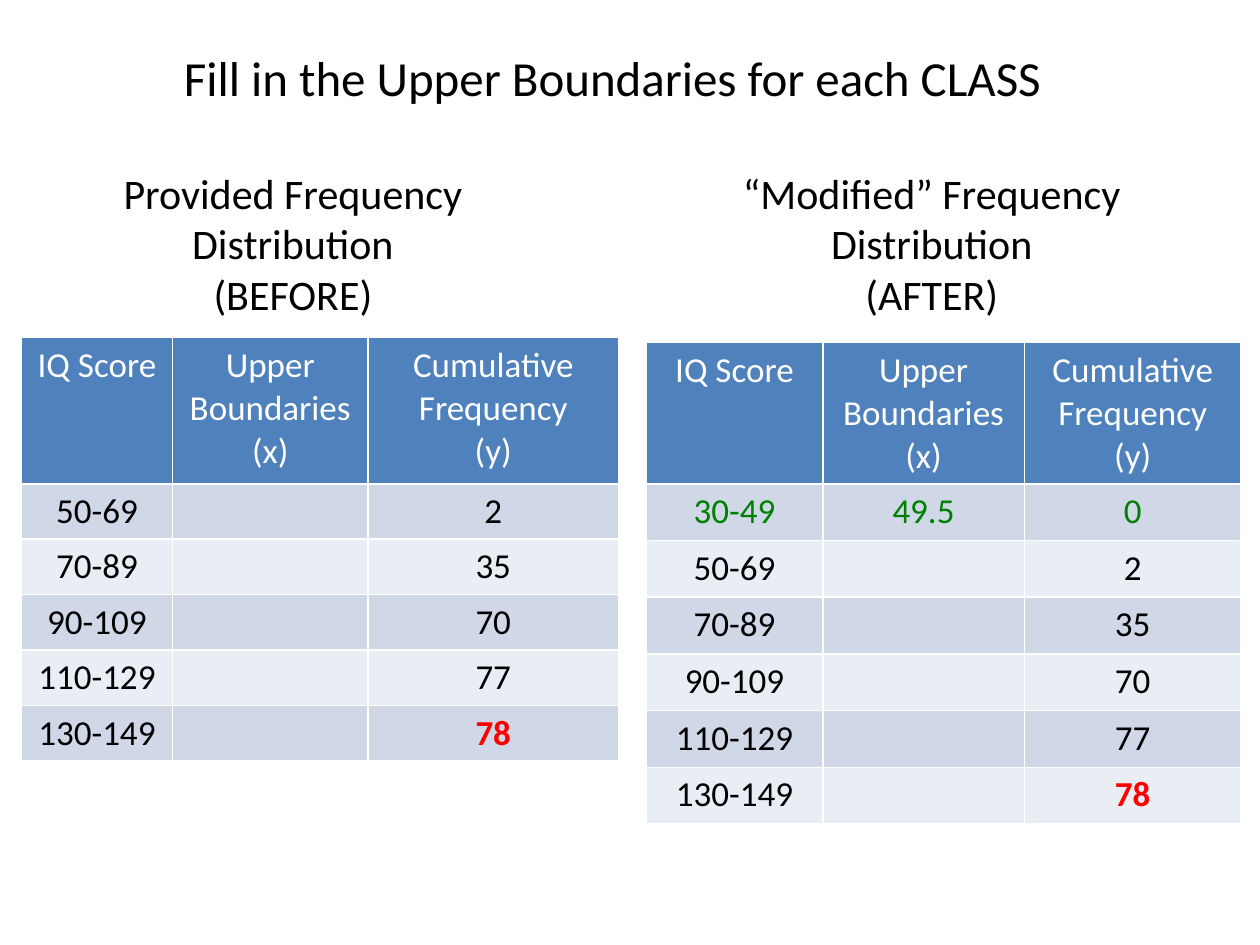
"""Build a slide with two cumulative frequency tables, before and after adding a class."""
from dataclasses import dataclass

from pptx import Presentation
from pptx.dml.color import RGBColor as Color
from pptx.enum.text import MSO_ANCHOR as Anchor, MSO_AUTO_SIZE as AutoSize, PP_ALIGN as Align
from pptx.util import Inches, Pt


@dataclass(frozen=True)
class Theme:
    font: str = "Calibri"
    title_size: int = 28
    heading_size: int = 24
    cell_size: int = 20
    ink: str = "000000"
    header_ink: str = "FFFFFF"
    added: str = "008000"
    total: str = "FF0000"
    header_fill: str = "4F81BD"
    bands: tuple = ("D0D8E8", "E9EDF4")


theme = Theme()


def write(frame, text, *, size, color=theme.ink, bold=False):
    frame.text = text
    for para in frame.paragraphs:
        para.alignment = Align.CENTER
        for span in para.runs:
            span.font.name = theme.font
            span.font.size = Pt(size)
            span.font.bold = bold
            span.font.color.rgb = Color.from_string(color)


deck = Presentation()
deck.slide_width, deck.slide_height = Inches(10), Inches(7.5)
page = deck.slides.add_slide(deck.slide_layouts[5])

title = page.shapes.title
title.left, title.top, title.width, title.height = map(Inches, (0.6, 0.33, 8.52, 0.57))
title.text_frame.auto_size = AutoSize.SHAPE_TO_FIT_TEXT
title.text_frame.vertical_anchor = Anchor.TOP
write(title.text_frame, "Fill in the Upper Boundaries for each CLASS", size=theme.title_size)

header = ("IQ Score", "Upper Boundaries\n(x)", "Cumulative Frequency\n(y)")
added_class = ("30-49", "49.5", "0")
total = "78"
classes = [
    ("50-69", "", "2"),
    ("70-89", "", "35"),
    ("90-109", "", "70"),
    ("110-129", "", "77"),
    ("130-149", "", total),
]
panels = [
    ("Provided Frequency Distribution\n(BEFORE)", 0.6, (0.17, 2.68),
     (1.2, 1.55, 1.99), 1.16, 0.44, classes),
    ("“Modified” Frequency Distribution\n(AFTER)", 5.67, (5.13, 2.72),
     (1.4, 1.6, 1.72), 1.12, 0.45, [added_class, *classes]),
]

for heading, heading_left, (left, top), widths, header_height, row_height, body in panels:
    box = page.shapes.add_textbox(Inches(heading_left), Inches(1.28), Inches(3.45), Inches(1.31))
    box.text_frame.word_wrap = True
    box.text_frame.auto_size = AutoSize.SHAPE_TO_FIT_TEXT
    write(box.text_frame, heading, size=theme.heading_size)

    rows = [header, *body]
    height = header_height + row_height * len(body)
    table = page.shapes.add_table(
        len(rows), len(header), Inches(left), Inches(top), Inches(sum(widths)), Inches(height)
    ).table
    for column, width in zip(table.columns, widths):
        column.width = Inches(width)

    for row_index, values in enumerate(rows):
        is_header = row_index == 0
        table.rows[row_index].height = Inches(header_height if is_header else row_height)
        fill = theme.header_fill if is_header else theme.bands[(row_index - 1) % 2]
        for column_index, value in enumerate(values):
            cell = table.cell(row_index, column_index)
            cell.fill.solid()
            cell.fill.fore_color.rgb = Color.from_string(fill)
            if is_header:
                color = theme.header_ink
            elif values == added_class:
                color = theme.added
            else:
                color = theme.total if value == total else theme.ink
            write(cell.text_frame, value, size=theme.cell_size, color=color, bold=value == total)

deck.save("out.pptx")
